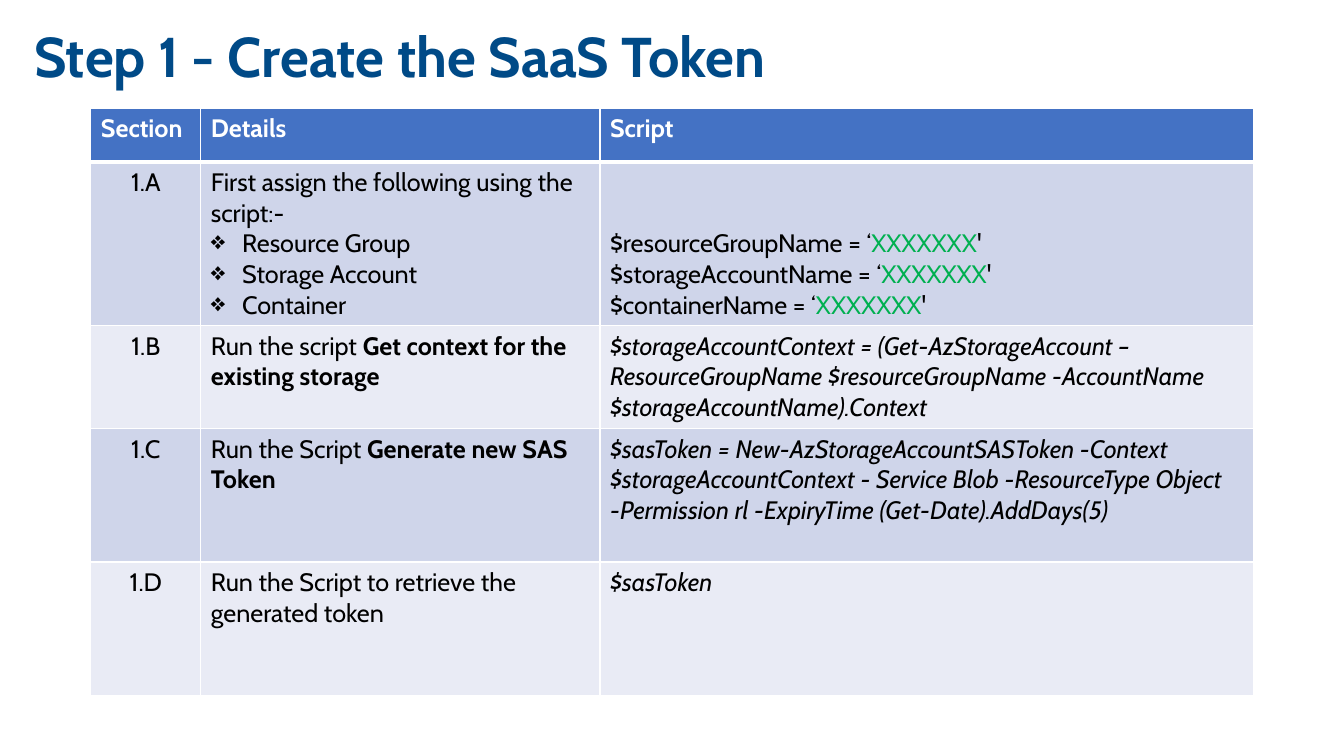
from lxml.etree import SubElement
from pptx import Presentation
from pptx.dml.color import RGBColor
from pptx.enum.text import MSO_ANCHOR, MSO_AUTO_SIZE, PP_ALIGN
from pptx.oxml.ns import qn
from pptx.util import Cm, Pt

COLORS = {"title": "004A87", "header": "4472C4", "odd": "CFD5EA", "even": "E9EBF5",
          "white": "FFFFFF", "text": "000000", "value": "00B050"}
COLUMN_WIDTHS = [2.77, 10.06, 16.48]
ROW_HEIGHTS = [1.36, 4.12, 2.59, 3.36, 3.36]
TABLE_LEFT, TABLE_TOP = 2.29, 2.72

HEADINGS = ["Section", "Details", "Script"]
RESOURCES = ["Resource Group", "Storage Account", "Container"]
VARIABLES = ["resourceGroupName", "storageAccountName", "containerName"]
ITALIC, BOLD, VALUE = {"italic": True}, {"bold": True}, {"color": "value"}

# A cell is a list of paragraphs, a paragraph a list of (text, style) runs.
STEPS = [
    ("1.A",
     [[("First assign the following using the script:-", {})]]
     + [[(resource, {})] for resource in RESOURCES],
     [[(f"${variable} = ‘", {}), ("XXXXXXX", VALUE), ("'", {})] for variable in VARIABLES]),
    ("1.B",
     [[("Run the script ", {}), ("Get context for the existing storage", BOLD)]],
     [[("$storageAccountContext = (Get-AzStorageAccount –ResourceGroupName "
        "$resourceGroupName -AccountName $storageAccountName).Context", ITALIC)]]),
    ("1.C",
     [[("Run the Script ", {}), ("Generate new SAS Token", BOLD)]],
     [[("$sasToken = New-AzStorageAccountSASToken -Context $storageAccountContext "
        "- Service Blob -ResourceType Object -Permission rl "
        "-ExpiryTime (Get-Date).AddDays(5)", ITALIC)]]),
    ("1.D",
     [[("Run the Script to retrieve the generated token", {})]],
     [[("$sasToken", ITALIC)]]),
]


class SlideBuilder:
    font_name = "Cabin"

    def __init__(self, presentation):
        self.slide = presentation.slides.add_slide(presentation.slide_layouts[5])

    def style_font(self, font, size=18, color="text", bold=False, italic=False):
        font.name = self.font_name
        font.size = Pt(size)
        font.bold = bold
        font.italic = italic
        font.color.rgb = RGBColor.from_string(COLORS[color])

    def title(self, text):
        heading = self.slide.shapes.title
        heading.left, heading.top = Cm(0.86), Cm(0.74)
        heading.width, heading.height = Cm(27.94), Cm(1.57)
        frame = heading.text_frame
        frame.margin_left = frame.margin_right = frame.margin_top = frame.margin_bottom = 0
        frame.word_wrap = True
        frame.auto_size = MSO_AUTO_SIZE.NONE
        frame.vertical_anchor = MSO_ANCHOR.TOP
        frame.text = text
        paragraph = frame.paragraphs[0]
        paragraph.alignment = PP_ALIGN.LEFT
        paragraph.line_spacing = 0.9
        paragraph.space_before = Pt(0)
        self.style_font(paragraph.runs[0].font, size=40, color="title", bold=True)

    def table(self, left, top, column_widths, row_heights):
        table = self.slide.shapes.add_table(
            len(row_heights), len(column_widths), Cm(left), Cm(top),
            Cm(sum(column_widths)), Cm(sum(row_heights))).table
        table.horz_banding = False
        for column, width in zip(table.columns, column_widths):
            column.width = Cm(width)
        for row, height in zip(table.rows, row_heights):
            row.height = Cm(height)
        return table

    def cell(self, cell, paragraphs, fill, top_line=1, bottom_line=1, align=PP_ALIGN.LEFT):
        self.borders(cell, {"lnL": 1, "lnR": 1, "lnT": top_line, "lnB": bottom_line})
        cell.fill.solid()
        cell.fill.fore_color.rgb = RGBColor.from_string(COLORS[fill])
        frame = cell.text_frame
        for index, runs in enumerate(paragraphs):
            paragraph = frame.add_paragraph() if index else frame.paragraphs[0]
            paragraph.alignment = align
            for text, style in runs:
                run = paragraph.add_run()
                run.text = text
                self.style_font(run.font, **style)

    def borders(self, cell, widths):
        properties = cell._tc.get_or_add_tcPr()
        for side, points in widths.items():
            line = SubElement(properties, qn(f"a:{side}"), w=str(Pt(points)))
            solid = SubElement(line, qn("a:solidFill"))
            SubElement(solid, qn("a:srgbClr"), val=COLORS["white"])

    def bullet(self, paragraph, mark="❖"):
        properties = paragraph._p.get_or_add_pPr()
        indent = Cm(0.79)
        properties.set("marL", str(indent))
        properties.set("indent", str(-indent))
        SubElement(properties, qn("a:buChar"), char=mark)


def main():
    presentation = Presentation()
    presentation.slide_width, presentation.slide_height = Cm(33.87), Cm(19.05)
    builder = SlideBuilder(presentation)
    builder.title("Step 1 - Create the SaaS Token")

    steps_table = builder.table(TABLE_LEFT, TABLE_TOP, COLUMN_WIDTHS, ROW_HEIGHTS)
    for column, heading in enumerate(HEADINGS):
        builder.cell(steps_table.cell(0, column),
                     [[(heading, {"color": "white", "bold": True})]],
                     "header", bottom_line=3)

    for row, (section, details, script) in enumerate(STEPS, start=1):
        fill = "odd" if row % 2 else "even"
        top_line = 3 if row == 1 else 1
        builder.cell(steps_table.cell(row, 0), [[(section, {})]], fill, top_line,
                     align=PP_ALIGN.CENTER)
        builder.cell(steps_table.cell(row, 1), details, fill, top_line)
        builder.cell(steps_table.cell(row, 2), script, fill, top_line)

    for resource in steps_table.cell(1, 1).text_frame.paragraphs[1:]:
        builder.bullet(resource)
    # The assignments line up with the three bullets beside them.
    steps_table.cell(1, 2).vertical_anchor = MSO_ANCHOR.BOTTOM

    presentation.save("out.pptx")


if __name__ == "__main__":
    main()
